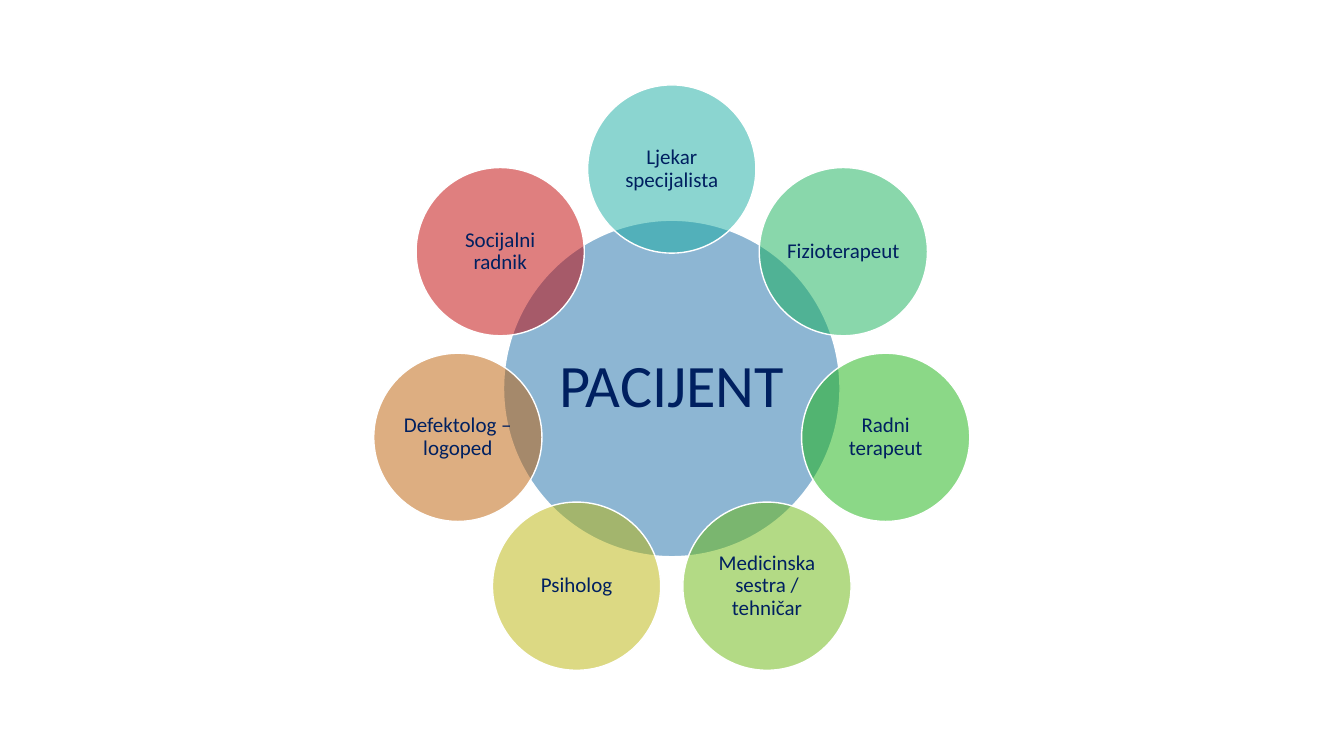
import math

from lxml import etree
from pptx import Presentation
from pptx import util as u
from pptx.dml.color import RGBColor
from pptx.enum import shapes, text
from pptx.oxml import ns

COLORS = {
    "patient": "1D6FA9",
    "doctor": "19ACA2",
    "physio": "15B059",
    "occupational": "18B310",
    "nurse": "68B60C",
    "psychologist": "BAB508",
    "speech": "BD5E04",
    "social": "C00000",
    "outline": "FFFFFF",
    "text": "002060",
}

TEAM = [
    ("Ljekar specijalista", "doctor"),
    ("Fizioterapeut", "physio"),
    ("Radni terapeut", "occupational"),
    ("Medicinska sestra / tehničar", "nurse"),
    ("Psiholog", "psychologist"),
    ("Defektolog – logoped", "speech"),
    ("Socijalni radnik", "social"),
]

CENTER_X, CENTER_Y = 16.93, 9.79
ORBIT = 5.53
PATIENT_SIZE, MEMBER_SIZE = 8.48, 4.24


def rgb(name):
    return RGBColor.from_string(COLORS[name])


def box(x, y, size):
    return u.Cm(x - size / 2), u.Cm(y - size / 2), u.Cm(size), u.Cm(size)


def add_circle(s, x, y, size, color):
    sp = s.shapes.add_shape(shapes.MSO_SHAPE.OVAL, *box(x, y, size))
    sp.shadow.inherit = False
    sp.fill.solid()
    sp.fill.fore_color.rgb = rgb(color)
    clr = sp.fill._xPr.find(".//" + ns.qn("a:srgbClr"))
    etree.SubElement(clr, ns.qn("a:alpha"), val="50000")
    sp.line.color.rgb = rgb("outline")
    sp.line.width = u.Pt(1)


def add_label(s, x, y, size, label, points, inset):
    tf = s.shapes.add_textbox(*box(x, y, size)).text_frame
    tf.word_wrap = True
    tf.vertical_anchor = text.MSO_ANCHOR.MIDDLE
    tf.margin_left = tf.margin_right = u.Cm(inset)
    tf.margin_top = tf.margin_bottom = u.Cm(inset)
    p = tf.paragraphs[0]
    p.alignment = text.PP_ALIGN.CENTER
    p.line_spacing = 0.9
    r = p.add_run()
    r.text = label
    r.font.name = "Calibri"
    r.font.size = u.Pt(points)
    r.font.color.rgb = rgb("text")


def add_bubble(s, x, y, size, color, label, points, inset):
    add_circle(s, x, y, size, color)
    add_label(s, x, y, size / math.sqrt(2), label, points, inset)


def main():
    prs = Presentation()
    prs.slide_width, prs.slide_height = u.Cm(33.87), u.Cm(19.05)
    s = prs.slides.add_slide(prs.slide_layouts[6])
    add_bubble(s, CENTER_X, CENTER_Y, PATIENT_SIZE, "patient", "PACIJENT", 43, 0.15)
    for i, (label, color) in enumerate(TEAM):
        angle = 2 * math.pi * i / len(TEAM)
        x = CENTER_X + ORBIT * math.sin(angle)
        y = CENTER_Y - ORBIT * math.cos(angle)
        add_bubble(s, x, y, MEMBER_SIZE, color, label, 15, 0.05)
    prs.save("out.pptx")


if __name__ == "__main__":
    main()
